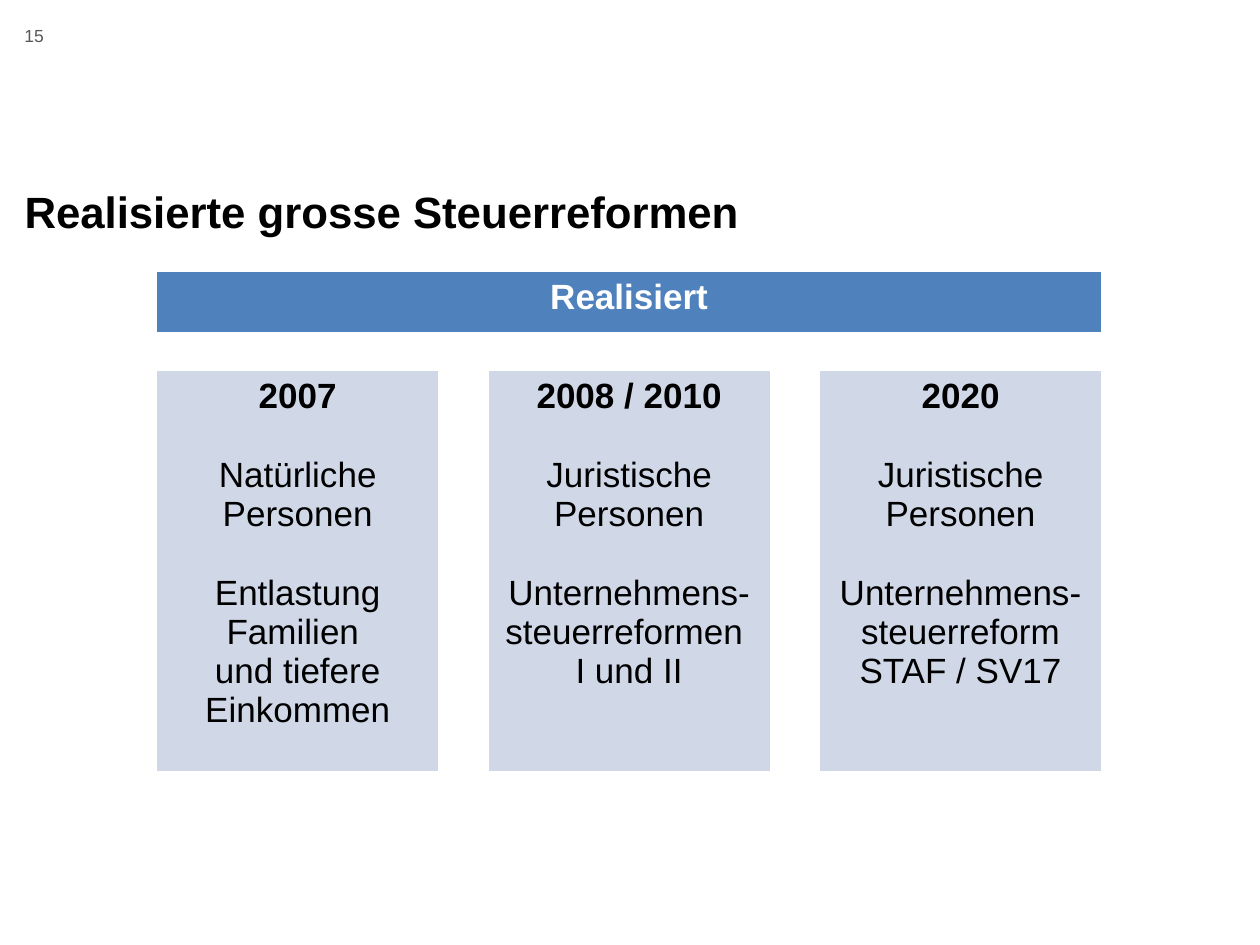
import pptx
import pptx.dml.color
import pptx.enum.text
import pptx.util

Pt = pptx.util.Pt
ALIGN = pptx.enum.text.PP_ALIGN
ANCHOR = pptx.enum.text.MSO_ANCHOR

BLACK, WHITE, GREY = "000000", "FFFFFF", "555959"
HEADER_FILL, BODY_FILL = "4F81BD", "D0D8E8"
COLUMN_WIDTHS = [161.3, 28.1, 161.3, 28.1, 161.3]
ROW_HEIGHTS = [35.3, 21.3, 229.7]
BLANK_LINE = 23

# Each reform: year, then groups of lines separated by a gap
REFORMS = [
    ("2007", ["Natürliche Personen"], ["Entlastung Familien ", "und tiefere Einkommen"]),
    ("2008 / 2010", ["Juristische Personen"], ["Unternehmens-steuerreformen \vI und II"]),
    ("2020", ["Juristische Personen"], ["Unternehmens-steuerreform STAF / SV17"]),
]


def colour(value):
    return pptx.dml.color.RGBColor.from_string(value)


def write(para, text, size=20, color=BLACK, bold=False, align=ALIGN.CENTER,
          before=0, spacing=None):
    para.text = text
    para.alignment = align
    para.space_before = Pt(before)
    if spacing:
        para.line_spacing = spacing
    for font in [para.font] + [span.font for span in para.runs]:
        font.name = "Arial"
        font.size = Pt(size)
        font.bold = bold
        font.color.rgb = colour(color)


def prepare_frame(box, anchor):
    frame = box.text_frame
    frame.word_wrap = True
    frame.auto_size = pptx.enum.text.MSO_AUTO_SIZE.NONE
    frame.vertical_anchor = anchor
    frame.margin_left = frame.margin_top = frame.margin_right = frame.margin_bottom = 0
    return frame.paragraphs[0]


def add_page_number(page, number):
    box = page.shapes.add_textbox(Pt(14), Pt(14.4), Pt(31.7), Pt(28.8))
    write(prepare_frame(box, ANCHOR.TOP), number, size=10, color=GREY, align=ALIGN.LEFT)


def format_title(page, text):
    title = page.shapes.title
    title.left, title.top, title.width, title.height = Pt(14), Pt(76.3), Pt(692), Pt(58.3)
    write(prepare_frame(title, ANCHOR.BOTTOM), text, size=25, bold=True,
          align=ALIGN.LEFT, spacing=0.7)


def fill_cell(cell, color):
    cell.fill.solid()
    cell.fill.fore_color.rgb = colour(color)


def write_reform(cell, year, *groups):
    fill_cell(cell, BODY_FILL)
    frame = cell.text_frame
    write(frame.paragraphs[0], year, bold=True)
    for group in groups:
        for index, line in enumerate(group):
            write(frame.add_paragraph(), line, before=0 if index else BLANK_LINE)


def add_reform_table(page):
    table = page.shapes.add_table(
        len(ROW_HEIGHTS), len(COLUMN_WIDTHS), Pt(89.5), Pt(155),
        Pt(sum(COLUMN_WIDTHS)), Pt(sum(ROW_HEIGHTS))).table
    for column, width in zip(table.columns, COLUMN_WIDTHS):
        column.width = Pt(width)
    for row, height in zip(table.rows, ROW_HEIGHTS):
        row.height = Pt(height)
    table.horz_banding = False
    for cell in table.iter_cells():
        cell.fill.background()

    last = len(COLUMN_WIDTHS) - 1
    for row in (0, 1):
        table.cell(row, 0).merge(table.cell(row, last))
    header, gap = table.cell(0, 0), table.cell(1, 0)
    fill_cell(header, HEADER_FILL)
    write(header.text_frame.paragraphs[0], "Realisiert", color=WHITE, bold=True)
    for column in range(len(COLUMN_WIDTHS)):
        cell = table.cell(1, column)
        cell.margin_top = cell.margin_bottom = 0
    gap.text_frame.paragraphs[0].font.size = Pt(10)

    for index, reform in enumerate(REFORMS):
        write_reform(table.cell(2, 2 * index), *reform)


def main():
    deck = pptx.Presentation()
    deck.slide_width, deck.slide_height = Pt(720), Pt(540)
    page = deck.slides.add_slide(deck.slide_layouts[5])
    add_page_number(page, "15")
    format_title(page, "Realisierte grosse Steuerreformen")
    add_reform_table(page)
    deck.save("out.pptx")


if __name__ == "__main__":
    main()
